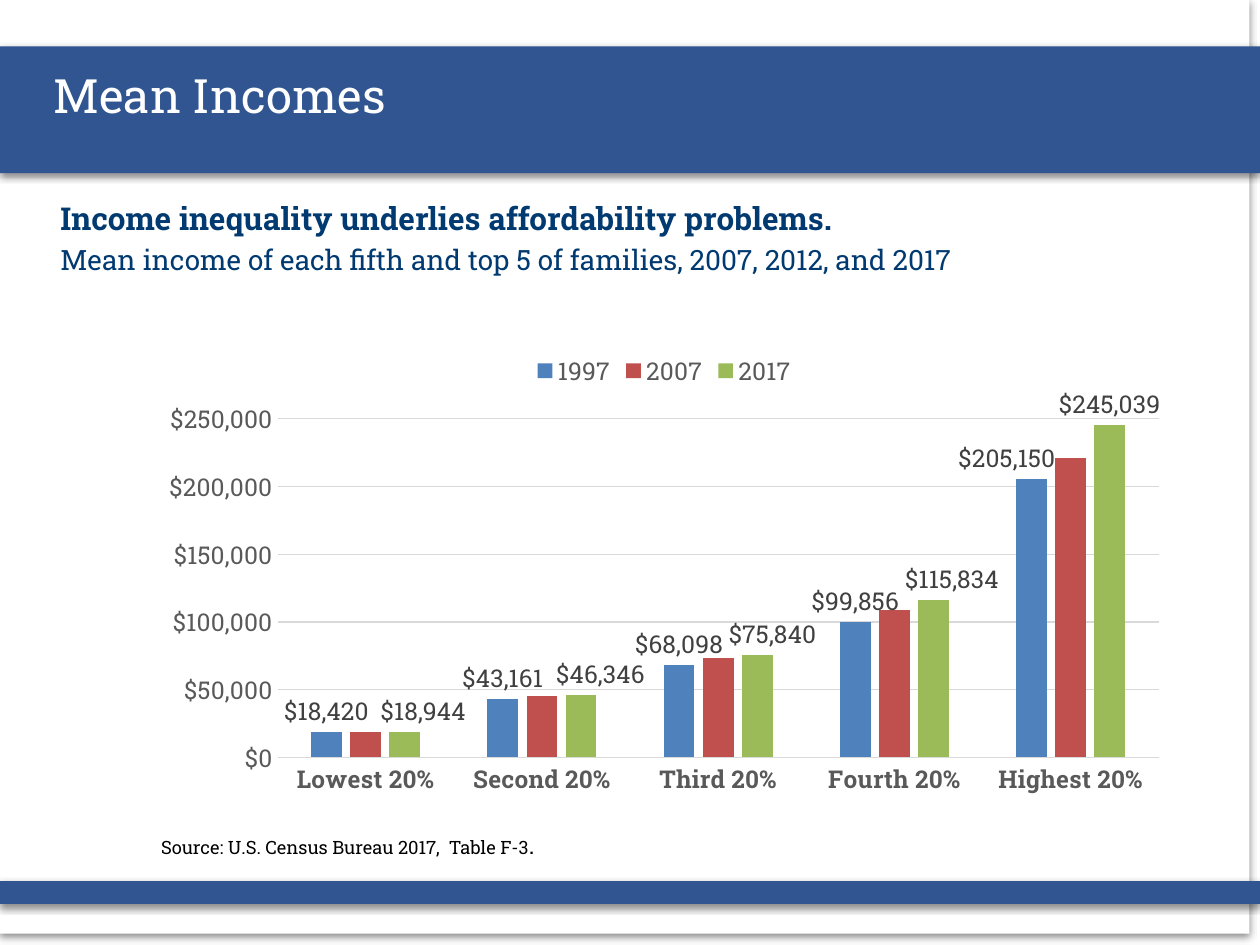
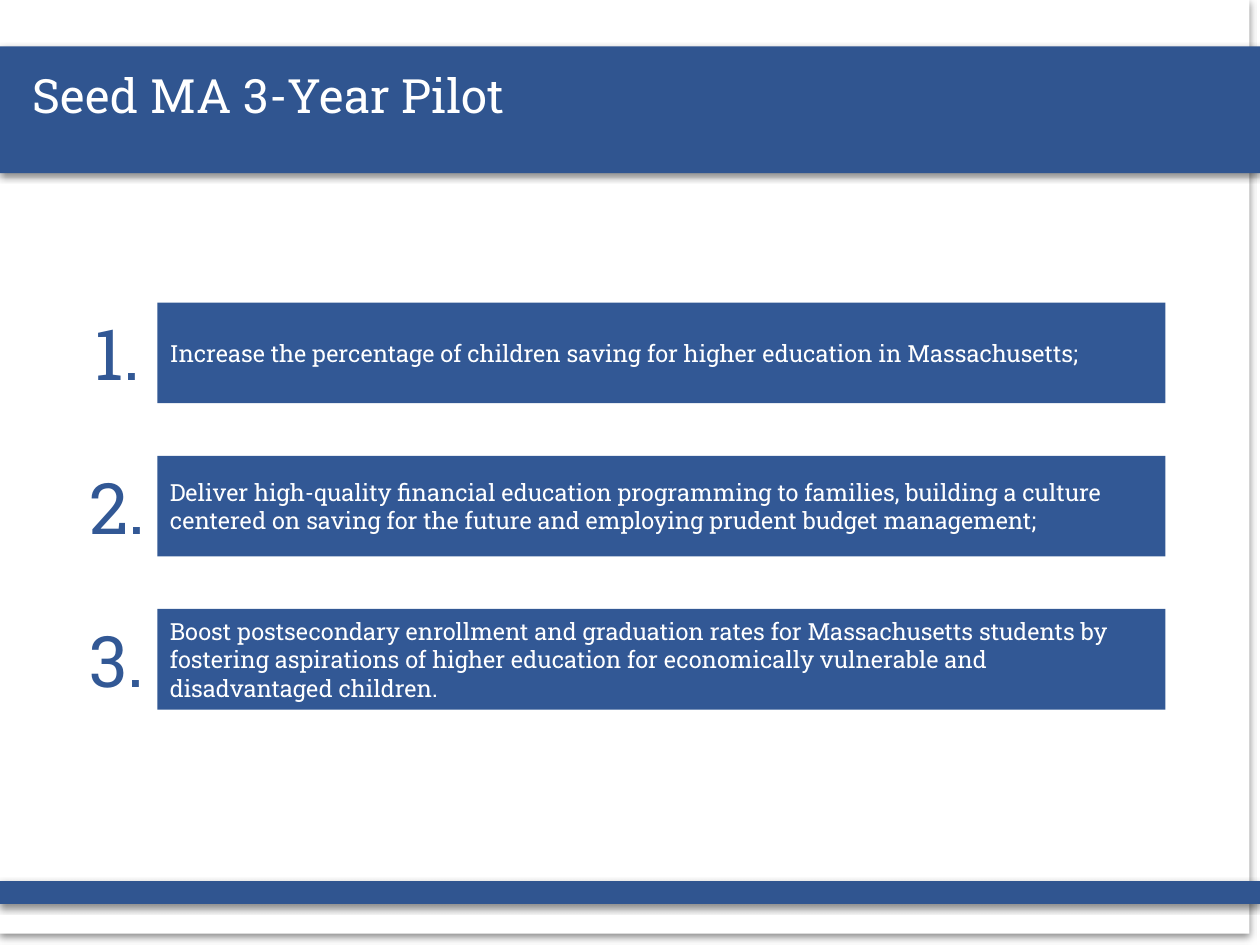
from lxml.etree import SubElement
from pptx import Presentation
from pptx.chart.data import CategoryChartData
from pptx.dml.color import RGBColor
from pptx.enum.chart import XL_CHART_TYPE, XL_LABEL_POSITION, XL_LEGEND_POSITION, XL_TICK_MARK
from pptx.enum.shapes import MSO_SHAPE
from pptx.enum.text import MSO_ANCHOR, PP_ALIGN
from pptx.oxml.ns import qn
from pptx.util import Pt

FONT = "Roboto Slab"
WHITE, BLACK = "FFFFFF", "000000"
BAND_BLUE, BOX_BLUE, NAVY = "305590", "325895", "003A70"
AXIS_GREY, LABEL_GREY, GRID_GREY = "595959", "404040", "D9D9D9"
DOLLARS = '"$"#,##0'

QUINTILES = ["Lowest 20%", "Second 20%", "Third 20%", "Fourth 20%", "Highest 20%"]
# year, bar colour, mean incomes, sideways label shifts by point (None: no labels)
INCOMES = [
    ("1997", "4F81BD", (18420, 43161, 68098, 99856, 205150), {4: -0.024}),
    ("2007", "C0504D", (19000, 45000, 73000, 109000, 221000), None),
    ("2017", "9BBB59", (18944, 46346, 75840, 115834, 245039),
     {0: 0.018, 1: 0.019, 2: 0.015, 3: 0.018}),
]
GOALS = [
    "Increase the percentage of children saving for higher education in Massachusetts;",
    "Deliver high-quality financial education programming to families, building a culture "
    "centered on saving for the future and employing prudent budget management;",
    "Boost postsecondary enrollment and graduation rates for Massachusetts students by "
    "fostering aspirations of higher education for economically vulnerable and "
    "disadvantaged children.",
]


def colour(hex_code):
    return RGBColor.from_string(hex_code)


def style_font(font, size, hex_code, bold=False):
    font.name, font.size, font.bold = FONT, Pt(size), bold
    font.color.rgb = colour(hex_code)


# Text and shapes
def write(para, text, size=13.5, color=WHITE, bold=False, align=PP_ALIGN.LEFT, before=0):
    para.alignment = align
    if before:
        para.space_before = Pt(before)
    span = para.add_run()
    span.text = text
    style_font(span.font, size, color, bold)


def add_text_box(page, left, top, width, height, wrap=True):
    box = page.shapes.add_textbox(Pt(left), Pt(top), Pt(width), Pt(height))
    box.text_frame.word_wrap = wrap
    return box.text_frame


def add_rectangle(page, left, top, width, height, fill, shadow=False):
    box = page.shapes.add_shape(MSO_SHAPE.RECTANGLE, Pt(left), Pt(top), Pt(width), Pt(height))
    box.fill.solid()
    box.fill.fore_color.rgb = colour(fill)
    box.line.fill.background()
    box.shadow.inherit = False
    if shadow:
        effects = box._element.spPr.find(qn("a:effectLst"))
        outer = SubElement(effects, qn("a:outerShdw"), blurRad=str(Pt(4)), dist=str(Pt(2)),
                           dir="5400000", algn="ctr", rotWithShape="0")
        tint = SubElement(outer, qn("a:srgbClr"), val=BLACK)
        SubElement(tint, qn("a:alpha"), val="45000")
    return box


def add_page(deck, title, title_left):
    page = deck.slides.add_slide(deck.slide_layouts[6])
    add_rectangle(page, 0, 0, 714, 533.5, WHITE, shadow=True)
    add_rectangle(page, 0, 503.5, 720, 13, BAND_BLUE, shadow=True)
    add_rectangle(page, 0, 26.5, 720, 72.5, BAND_BLUE, shadow=True)
    frame = add_text_box(page, title_left, 34.5, 521, 55)
    write(frame.paragraphs[0], title, size=27)
    return page


# Chart
def add_layout(parent, index, **values):
    """Give a chart part a manual layout from fractions of the chart."""
    for old in parent.findall(qn("c:layout")):
        parent.remove(old)
    layout = SubElement(parent, qn("c:layout"))
    parent.insert(index, layout)
    manual = SubElement(layout, qn("c:manualLayout"))
    for tag, value in values.items():
        SubElement(manual, qn(f"c:{tag}"), val=str(value))


def add_value_labels(series, shifts):
    labels = series.data_labels
    labels.show_value = True
    labels.number_format, labels.number_format_is_linked = DOLLARS, False
    labels.position = XL_LABEL_POSITION.OUTSIDE_END
    style_font(labels.font, 14, LABEL_GREY)
    for point, shift in shifts.items():
        label = series.points[point].data_label
        label.position = XL_LABEL_POSITION.OUTSIDE_END
        style_font(label.font, 14, LABEL_GREY)
    for element in labels._element.findall(qn("c:dLbl")):
        point = int(element.find(qn("c:idx")).get("val"))
        add_layout(element, 1, x=shifts[point], y=0)


def style_axis(axis, bold=False):
    axis.major_tick_mark = axis.minor_tick_mark = XL_TICK_MARK.NONE
    style_font(axis.tick_labels.font, 14, AXIS_GREY, bold)


def style_line(line):
    line.color.rgb = colour(GRID_GREY)
    line.width = Pt(0.75)


def add_income_chart(page):
    data = CategoryChartData(number_format=DOLLARS)
    data.categories = QUINTILES
    for year, _, values, _ in INCOMES:
        data.add_series(year, values)
    chart = page.shapes.add_chart(XL_CHART_TYPE.COLUMN_CLUSTERED, Pt(85), Pt(194.4),
                                  Pt(589), Pt(265), data).chart
    style_font(chart.font, 14, BLACK)
    chart.has_title = False
    chart.has_legend = True
    chart.legend.position = XL_LEGEND_POSITION.TOP
    chart.legend.include_in_layout = False
    style_font(chart.legend.font, 14, AXIS_GREY)

    style_axis(chart.category_axis, bold=True)
    style_line(chart.category_axis.format.line)
    incomes = chart.value_axis
    style_axis(incomes)
    incomes.minimum_scale, incomes.maximum_scale, incomes.major_unit = 0, 260000, 50000
    incomes.tick_labels.number_format = DOLLARS
    incomes.tick_labels.number_format_is_linked = False
    incomes.format.line.fill.background()
    style_line(incomes.major_gridlines.format.line)

    plot = chart.plots[0]
    plot.gap_width, plot.overlap, plot.vary_by_categories = 219, -27, False
    for series, (_, fill, _, shifts) in zip(plot.series, INCOMES):
        series.format.fill.solid()
        series.format.fill.fore_color.rgb = colour(fill)
        if shifts:
            add_value_labels(series, shifts)
    plot_area = chart._chartSpace.find(".//" + qn("c:plotArea"))
    add_layout(plot_area, 0, layoutTarget="inner", xMode="edge", yMode="edge",
               x=0.125, y=0.14, w=0.855, h=0.76)


# Numbered goals
def add_goal(page, number, text, top):
    box = add_rectangle(page, 90, top, 576, 57.5, BOX_BLUE)
    frame = box.text_frame
    frame.word_wrap = True
    frame.vertical_anchor = MSO_ANCHOR.MIDDLE
    write(frame.paragraphs[0], text)

    frame = add_text_box(page, 42, top + 1.5, 50, 55)
    frame.margin_left = frame.margin_right = Pt(5.5)
    frame.margin_top = frame.margin_bottom = Pt(2.7)
    write(frame.paragraphs[0], f"{number}.", size=40.5, color=BOX_BLUE, align=PP_ALIGN.CENTER)


def main():
    deck = Presentation()
    deck.slide_width, deck.slide_height = Pt(720), Pt(540)

    # Mean incomes
    page = add_page(deck, "Mean Incomes", 23.5)
    frame = add_text_box(page, 27.5, 110, 692, 63.5)
    write(frame.paragraphs[0], "Income inequality underlies affordability problems.",
          size=18, color=NAVY, bold=True)
    write(frame.add_paragraph(),
          "Mean income of each fifth and top 5 of families, 2007, 2012, and 2017",
          size=16, color=NAVY, before=3.2)
    add_income_chart(page)
    source = add_text_box(page, 85, 471, 232.5, 24, wrap=False).paragraphs[0]
    write(source, "Source: U.S. Census Bureau 2017,  Table F-3", size=10.5, color=BLACK)
    write(source, ".", color=BLACK)

    # Pilot goals
    page = add_page(deck, "Seed MA 3-Year Pilot", 11.5)
    for index, goal in enumerate(GOALS):
        add_goal(page, index + 1, goal, 173 + 87.5 * index)

    deck.save("out.pptx")


if __name__ == "__main__":
    main()
